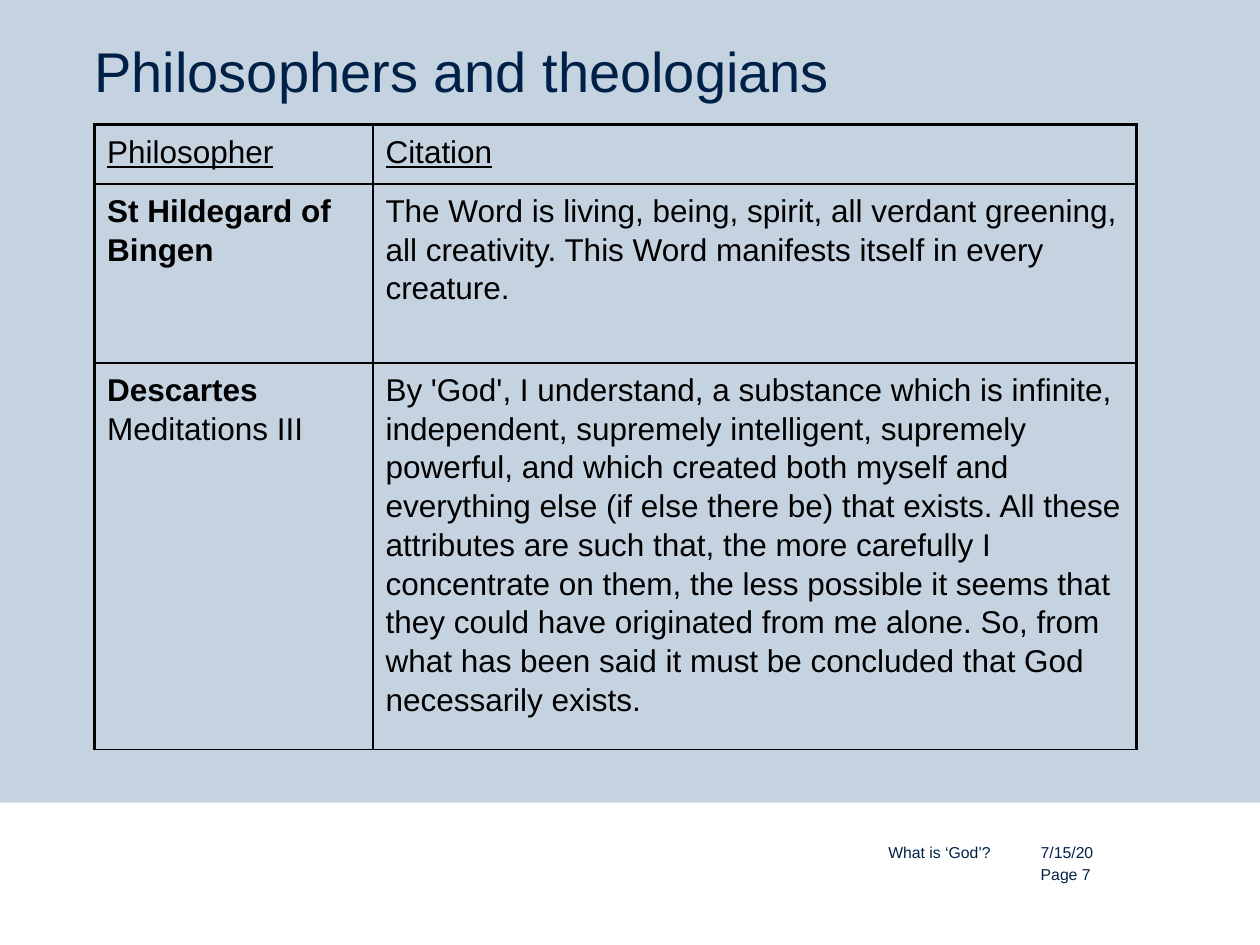
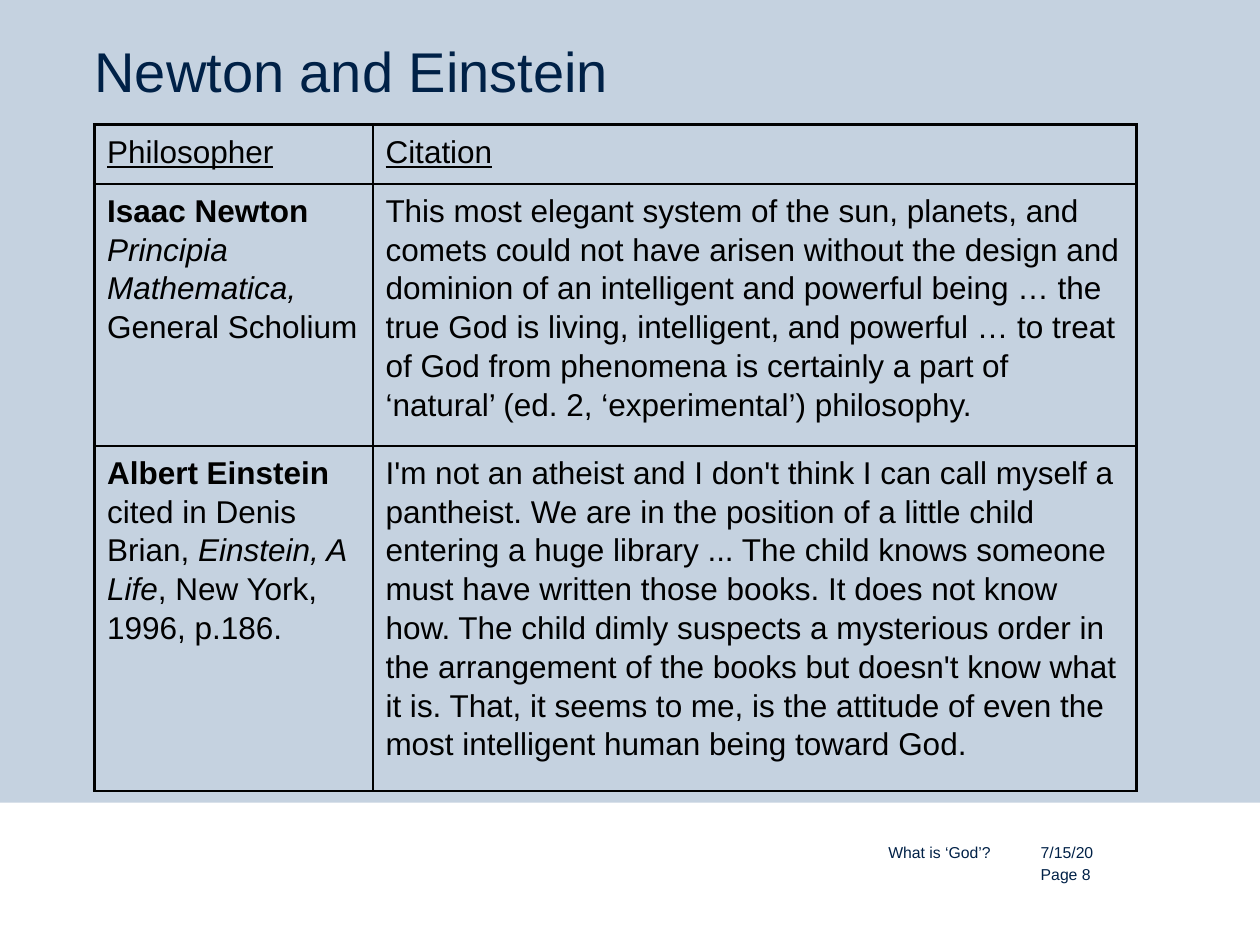
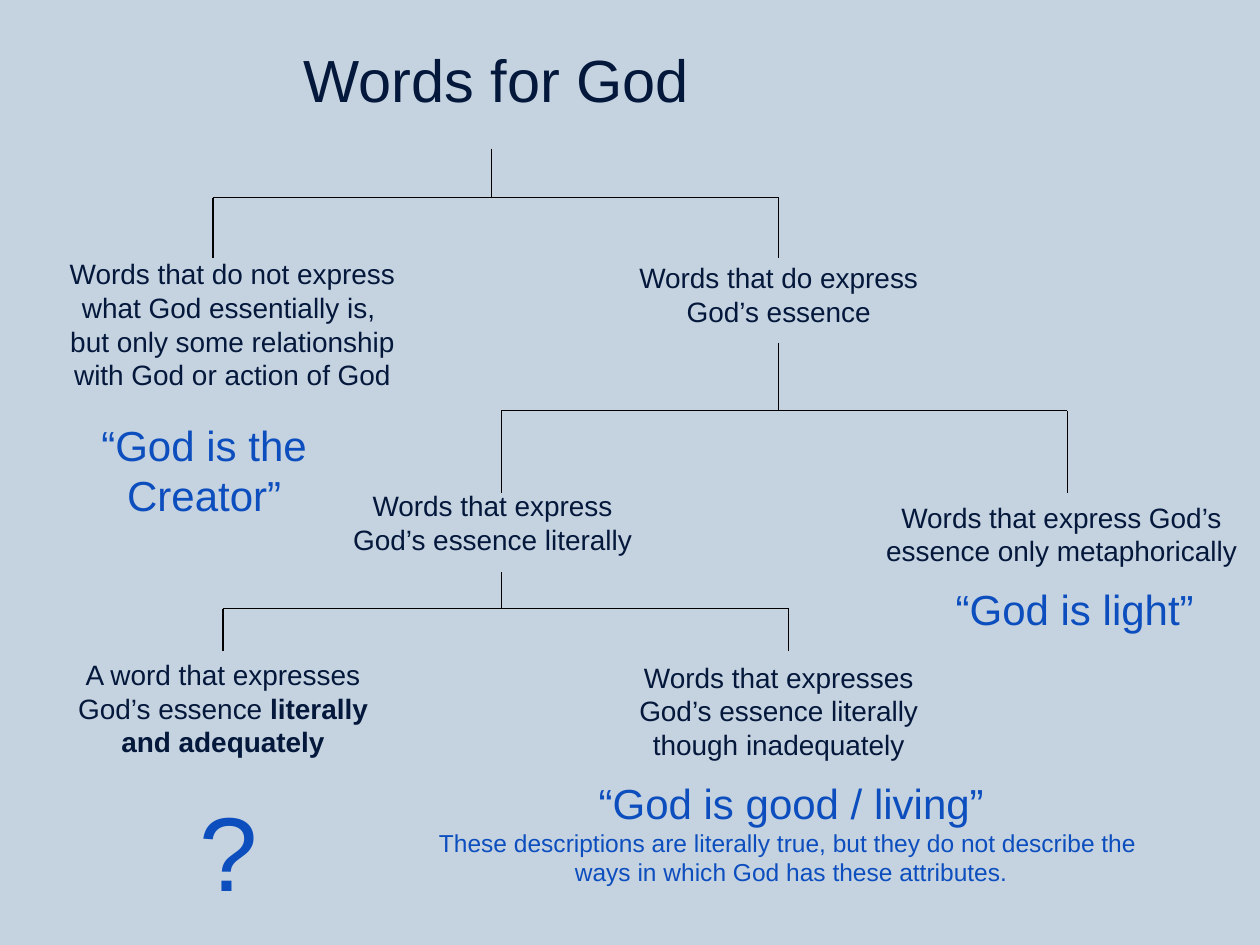
from lxml.etree import SubElement
from pptx import Presentation
from pptx.dml.color import RGBColor
from pptx.enum.shapes import MSO_CONNECTOR, MSO_SHAPE
from pptx.enum.text import MSO_AUTO_SIZE, PP_ALIGN
from pptx.oxml.ns import qn
from pptx.util import Inches, Pt

COLORS = {
    "background": "C5D2E0",
    "band": "FFFFFF",
    "navy": "002147",
    "ink": "04183B",
    "example": "0C4EBE",
    "black": "000000",
}
BOLD, ITALIC, UNDERLINE = {"bold": True}, {"italic": True}, {"underline": True}
TITLE = {"size": Pt(32)}
FOOTER = {"size": Pt(9)}
CELL = {"size": Pt(18)}
HEADING = {"size": Pt(34)}
TERM = {"size": Pt(16)}
EXAMPLE = {"size": Pt(24)}
REMARK = {"size": Pt(14)}
QUESTION = {"size": Pt(60)}


def write_runs(paragraph, runs, style, color):
    """Add (text, extra format) runs; a newline in the text is a line break."""
    for text, extra in runs:
        for index, line in enumerate(text.split("\n")):
            if index:
                paragraph.add_line_break()
            if not line:
                continue
            run = paragraph.add_run()
            run.text = line
            run.font.name = "Arial"
            run.font.color.rgb = RGBColor.from_string(COLORS[color])
            for attribute, value in {**style, **extra}.items():
                setattr(run.font, attribute, value)


def add_text(slide, place, runs, style, color, spacing=None):
    """Exact line spacing gives a box without margins, otherwise a centred growing one."""
    frame = slide.shapes.add_textbox(*map(Inches, place)).text_frame
    frame.word_wrap = True
    paragraph = frame.paragraphs[0]
    if spacing:
        for side in ("left", "top", "right", "bottom"):
            setattr(frame, f"margin_{side}", 0)
        paragraph.line_spacing = Pt(spacing)
    else:
        frame.auto_size = MSO_AUTO_SIZE.SHAPE_TO_FIT_TEXT
        paragraph.alignment = PP_ALIGN.CENTER
    write_runs(paragraph, runs, style, color)


# Slide title, page, row heights, rows of philosopher and citation
HEADER_ROW = ([("Philosopher", UNDERLINE)], [("Citation", UNDERLINE)])
CITATION_SLIDES = [
    ("Philosophers and theologians", 7, [0.47, 1.42, 1.67], [
        HEADER_ROW,
        ([("St Hildegard of Bingen", BOLD)],
         [("The Word is living, being, spirit, all verdant greening, all creativity. "
           "This Word manifests itself in every creature.", {})]),
        ([("Descartes\n", BOLD), ("Meditations III", {})],
         [("By 'God', I understand, a substance which is infinite, independent, "
           "supremely intelligent, supremely powerful, and which created both myself "
           "and everything else (if else there be) that exists. All these attributes "
           "are such that, the more carefully I concentrate on them, the less possible "
           "it seems that they could have originated from me alone. So, from what has "
           "been said it must be concluded that God necessarily exists.", {})]),
    ]),
    ("Newton and Einstein", 8, [0.47, 1.67, 1.28], [
        HEADER_ROW,
        ([("Isaac Newton\n", BOLD), ("Principia Mathematica,\n", ITALIC),
          ("General Scholium", {})],
         [("This most elegant system of the sun, planets, and comets could not have "
           "arisen without the design and dominion of an intelligent and powerful being "
           "… the true God is living, intelligent, and powerful … to treat of God from "
           "phenomena is certainly a part of ‘natural’ (ed. 2, ‘experimental’) "
           "philosophy.", {})]),
        ([("Albert Einstein\n", BOLD), ("cited in Denis Brian, ", {}),
          ("Einstein, A Life", ITALIC), (", New York, 1996, p.186.", {})],
         [("I'm not an atheist and I don't think I can call myself a pantheist. We are "
           "in the position of a little child entering a huge library ... The child "
           "knows someone must have written those books. It does not know how. The "
           "child dimly suspects a mysterious order in the arrangement of the books but "
           "doesn't know what it is. That, it seems to me, is the attitude of even the "
           "most intelligent human being toward God.", {})]),
    ]),
]

# Stem x, stem top, bar y, leg bottom, left leg x, right leg x
BRANCHES = [
    (3.9, 1.18, 1.57, 2.05, 1.69, 6.18),
    (6.18, 2.72, 3.26, 3.91, 3.98, 8.47),
    (3.98, 4.54, 4.83, 5.17, 1.77, 6.26),
]
TREE_TEXTS = [
    ((0.83, 0.29, 6.22, 0.67), HEADING, "ink", [("Words for God", {})]),
    ((0.27, 1.99, 3.15, 1.18), TERM, "ink",
     [("Words that do not express what God essentially is, \n"
       "but only some relationship with God or action of God", {})]),
    ((4.92, 2.02, 2.52, 0.64), TERM, "ink",
     [("Words that do express God’s essence", {})]),
    ((1.93, 3.83, 4.02, 0.64), TERM, "ink",
     [("Words that express \nGod’s essence literally ", {})]),
    ((6.89, 3.92, 3.07, 0.64), TERM, "ink",
     [("Words that express God’s essence only metaphorically", {})]),
    ((4.92, 5.19, 2.52, 0.91), TERM, "ink",
     [("Words that expresses God’s essence literally though inadequately", {})]),
    ((7.21, 4.58, 2.64, 0.5), EXAMPLE, "example", [("“God is light”", {})]),
    ((0.43, 5.17, 2.68, 0.91), TERM, "ink",
     [("A word that expresses God’s essence ", {}), ("literally and adequately", BOLD)]),
    ((2.44, 6.12, 7.68, 0.98), EXAMPLE, "example",
     [("“God is good / living”\n", {}),
      ("These descriptions are literally true, but they do not describe the \n"
       "ways in which God has these attributes.", REMARK)]),
    ((0.2, 3.28, 2.84, 0.91), EXAMPLE, "example", [("“God is the Creator”", {})]),
    ((1.46, 6.19, 0.71, 1.1), QUESTION, "example", [("?", {})]),
]

deck = Presentation()
deck.slide_width, deck.slide_height = Inches(10), Inches(7.5)
slides = [deck.slides.add_slide(deck.slide_layouts[6]) for _ in range(3)]
for slide in slides:
    slide.background.fill.solid()
    slide.background.fill.fore_color.rgb = RGBColor.from_string(COLORS["background"])

for slide, (title, page, heights, rows) in zip(slides, CITATION_SLIDES):
    band = slide.shapes.add_shape(
        MSO_SHAPE.RECTANGLE, 0, Inches(6.37), Inches(10), Inches(1.13))
    band.shadow.inherit = False
    band.fill.solid()
    band.fill.fore_color.rgb = RGBColor.from_string(COLORS["band"])
    band.line.fill.background()

    add_text(slide, (0.75, 0.31, 8.5, 1.02), [(title, {})], TITLE, "navy", 37)
    for place, footer in [
        ((8.26, 6.67, 1.49, 0.5), "7/15/20"),
        ((8.26, 6.85, 1.49, 0.28), f"Page {page}"),
        ((7.05, 6.67, 1.17, 0.59), "What is ‘God’?"),
    ]:
        add_text(slide, place, [(footer, {})], FOOTER, "navy", 12)

    citations = slide.shapes.add_table(
        len(rows), 2, Inches(0.75), Inches(0.99), Inches(8.27), Inches(sum(heights))).table
    citations.first_row = citations.horz_banding = False
    for column, width in zip(citations.columns, (2.21, 6.06)):
        column.width = Inches(width)
    for r, (height, row) in enumerate(zip(heights, rows)):
        citations.rows[r].height = Inches(height)
        for c, runs in enumerate(row):
            cell = citations.cell(r, c)
            paragraph = cell.text_frame.paragraphs[0]
            paragraph.line_spacing = 1.1
            write_runs(paragraph, runs, CELL, "black")
            properties = cell._tc.get_or_add_tcPr()
            outer_edges = {"L": c == 0, "R": c == 1, "T": r == 0, "B": False}
            for side, is_outer in outer_edges.items():
                border = SubElement(properties, qn(f"a:ln{side}"),
                                    w=str(Pt(2.25 if is_outer else 1)))
                fill = SubElement(border, qn("a:solidFill"))
                SubElement(fill, qn("a:srgbClr"), val=COLORS["black"])
            cell.fill.background()

tree_slide = slides[2]
for place, style, color, runs in TREE_TEXTS:
    add_text(tree_slide, place, runs, style, color)
for stem, top, bar, bottom, left, right in BRANCHES:
    branch = tree_slide.shapes.add_group_shape()
    for ends in [
        (left, bar, right, bar),
        (left, bar, left, bottom),
        (right, bar, right, bottom),
        (stem, top, stem, bar),
    ]:
        line = branch.shapes.add_connector(MSO_CONNECTOR.STRAIGHT, *map(Inches, ends))
        line.line.width = Pt(0.75)
        line.line.color.rgb = RGBColor.from_string(COLORS["black"])
        SubElement(line._element.spPr, qn("a:effectLst"))

deck.save("out.pptx")
